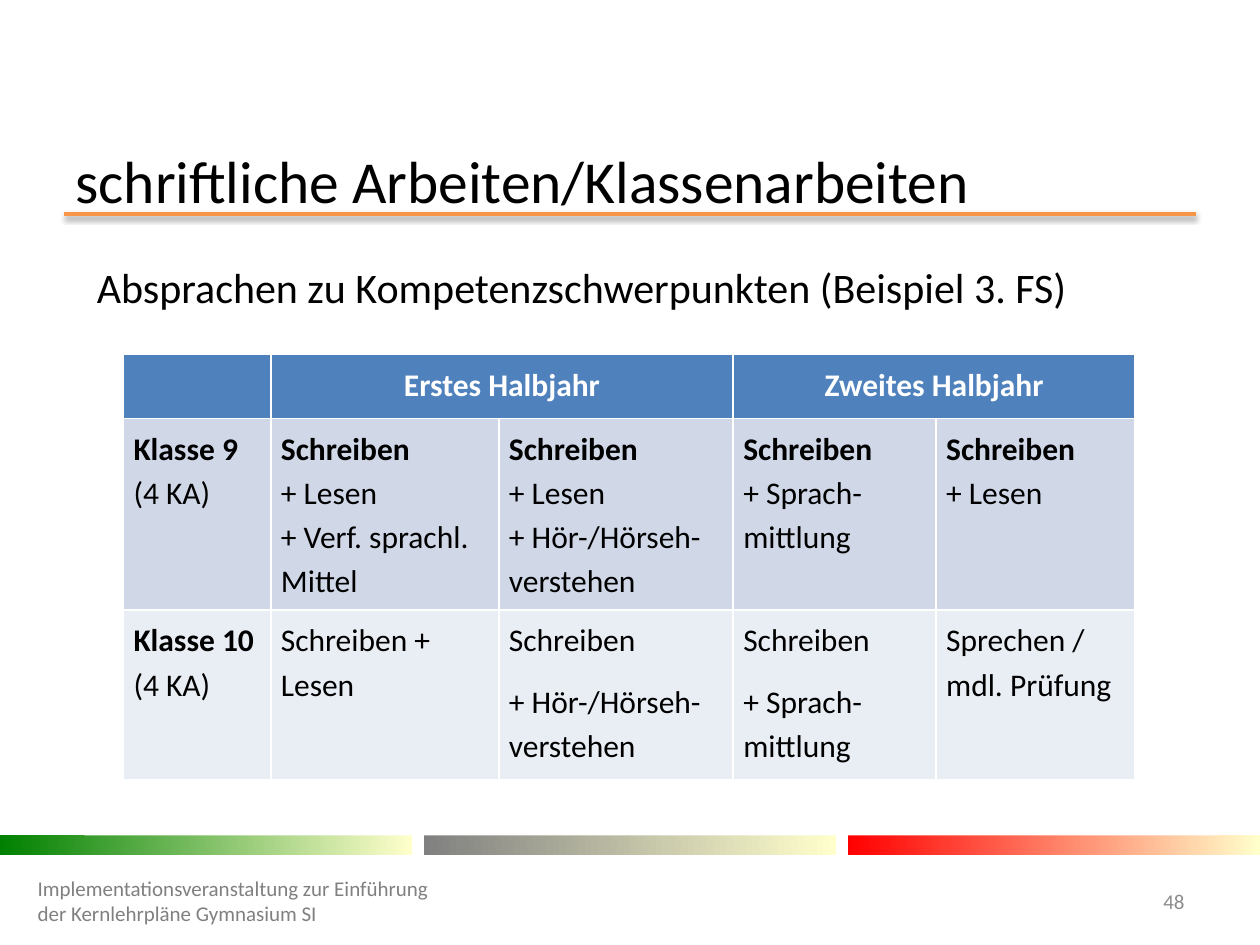
"""Build a slide with a table of the class tests for each half-year."""
from lxml.etree import SubElement
from pptx import Presentation
from pptx.dml.color import RGBColor as Rgb
from pptx.enum.shapes import MSO_CONNECTOR as Conn, MSO_SHAPE as Shape
from pptx.enum.text import MSO_ANCHOR as Anchor, PP_ALIGN as Align
from pptx.oxml.ns import qn
from pptx.util import Inches, Pt

BLACK = Rgb(0x00, 0x00, 0x00)
WHITE = Rgb(0xFF, 0xFF, 0xFF)
ORANGE = Rgb(0xF7, 0x96, 0x46)
GREEN = Rgb(0x00, 0x80, 0x00)
GRAY = Rgb(0x80, 0x80, 0x80)
RED = Rgb(0xFF, 0x00, 0x00)
CREAM = Rgb(0xFF, 0xFF, 0xCC)
PALE = Rgb(0x8C, 0x8C, 0x8C)
BLUE = Rgb(0x4F, 0x81, 0xBD)
BANDS = Rgb(0xD0, 0xD8, 0xE8), Rgb(0xE9, 0xED, 0xF4)

FONT = "Calibri"
WIDTHS = 1.17, 1.81, 1.86, 1.61, 1.58
HEIGHTS = 0.51, 1.52, 1.35
HEADS = {1: "Erstes Halbjahr", 3: "Zweites Halbjahr"}
ROWS = [
    ["Klasse 9\n(4 KA)",
     "Schreiben\n+ Lesen\n+ Verf. sprachl. Mittel",
     "Schreiben\n+ Lesen\n+ Hör-/Hörseh-verstehen",
     "Schreiben\n+ Sprach-mittlung",
     "Schreiben\n+ Lesen"],
    ["Klasse 10\n(4 KA)",
     "Schreiben + Lesen",
     "Schreiben\n+ Hör-/Hörseh-verstehen",
     "Schreiben\n+ Sprach-mittlung",
     "Sprechen / mdl. Prüfung"],
]


def style(para, size, color, bold=False, align=Align.LEFT):
    """Format a paragraph and its runs."""
    para.alignment = align
    for run in para.runs:
        font = run.font
        font.name, font.size, font.bold = FONT, Pt(size), bold
        font.color.rgb = color


def add_text(slide, box, text, size, color, align=Align.LEFT, anchor=Anchor.MIDDLE):
    """Add a wrapped text box and return it."""
    shape = slide.shapes.add_textbox(*map(Inches, box))
    frame = shape.text_frame
    frame.word_wrap = True
    frame.vertical_anchor = anchor
    frame.text = text
    style(frame.paragraphs[0], size, color, align=align)
    return shape


def add_title(slide, box):
    """Place the title and the shaded rule below it."""
    left, top, width, height = box
    title = slide.shapes.title
    title.left, title.top, title.width, title.height = map(Inches, box)
    frame = title.text_frame
    frame.text = "schriftliche Arbeiten/Klassenarbeiten"
    frame.vertical_anchor = Anchor.MIDDLE
    style(frame.paragraphs[0], 34, BLACK)
    level = Inches(top + height + 0.08)
    rule = slide.shapes.add_connector(
        Conn.STRAIGHT, Inches(left + 0.01), level, Inches(left + width - 0.01), level)
    rule.line.color.rgb = ORANGE
    rule.line.width = Pt(2)
    effects = SubElement(rule._element.spPr, qn("a:effectLst"))
    shade = SubElement(effects, qn("a:outerShdw"), blurRad=str(Pt(3.1)),
                       dist=str(Pt(1.6)), dir="5400000", rotWithShape="0")
    color = SubElement(shade, qn("a:srgbClr"), val=str(BLACK))
    SubElement(color, qn("a:alpha"), val="38000")


def add_bars(slide, box):
    """Draw three equal bars that fade to cream."""
    left, top, width, height = box
    size = 3.27
    step = (width - size) / 2
    for i, color in enumerate((GREEN, GRAY, RED)):
        bar = slide.shapes.add_shape(
            Shape.RECTANGLE, *map(Inches, (left + i * step, top, size, height)))
        bar.shadow.inherit = False
        bar.line.fill.background()
        bar.fill.gradient()
        bar.fill.gradient_angle = 0
        for stop, tone in zip(bar.fill.gradient_stops, (color, CREAM)):
            stop.color.rgb = tone


def add_footer(slide, box):
    """Place the event name on the left and the page number on the right."""
    left, top, width, height = box
    event = add_text(slide, (left, top, 3.31, height),
                     "Implementationsveranstaltung zur Einführung "
                     "der Kernlehrpläne Gymnasium SI", 12, GRAY)
    event.text_frame.margin_right = 0
    add_text(slide, (left + width - 0.64, top, 0.64, height), "48", 12, PALE, Align.RIGHT)


def add_body(slide, box):
    """Place the white body panel with its lead line."""
    panel = add_text(slide, box, "Absprachen zu Kompetenzschwerpunkten (Beispiel 3. FS)",
                     24, BLACK, anchor=Anchor.TOP)
    panel.fill.solid()
    panel.fill.fore_color.rgb = WHITE


def fill_cell(cell, fill, text=""):
    """Fill a cell, set its text and return its paragraphs."""
    cell.fill.solid()
    cell.fill.fore_color.rgb = fill
    cell.margin_left = cell.margin_right = Inches(0.08)
    cell.text_frame.text = text
    for para in cell.text_frame.paragraphs:
        para.line_spacing = 1.15
    return cell.text_frame.paragraphs


def add_plan(slide, box):
    """Build the table of tests by class and half-year."""
    table = slide.shapes.add_table(
        len(HEIGHTS), len(WIDTHS), *map(Inches, box)).table
    for col, width in zip(table.columns, WIDTHS):
        col.width = Inches(width)
    for row, height in zip(table.rows, HEIGHTS):
        row.height = Inches(height)
    for c in range(len(WIDTHS)):
        head = fill_cell(table.cell(0, c), BLUE, HEADS.get(c, ""))[0]
        style(head, 18, WHITE, True, Align.CENTER)
    for c in HEADS:
        table.cell(0, c).merge(table.cell(0, c + 1))
    for r, (texts, fill) in enumerate(zip(ROWS, BANDS)):
        for c, text in enumerate(texts):
            paras = fill_cell(table.cell(r + 1, c), fill, text)
            for i, para in enumerate(paras):
                style(para, 18, BLACK, i == 0 and (r == 0 or c == 0))
            if r == 1 and c > 0 and len(paras) > 1:
                paras[0].space_after = Pt(10)


def main():
    """Build and save the slide."""
    deck = Presentation()
    deck.slide_width, deck.slide_height = Inches(10), Inches(7.5)
    slide = deck.slides.add_slide(deck.slide_layouts[5])
    add_title(slide, (0.5, 1.23, 9, 0.39))
    add_bars(slide, (0, 6.63, 10, 0.16))
    add_footer(slide, (0.2, 6.95, 9.3, 0.4))
    add_body(slide, (0.67, 2.03, 9, 4.6))
    add_plan(slide, (0.98, 2.81, sum(WIDTHS), sum(HEIGHTS)))
    deck.save("out.pptx")


if __name__ == "__main__":
    main()
